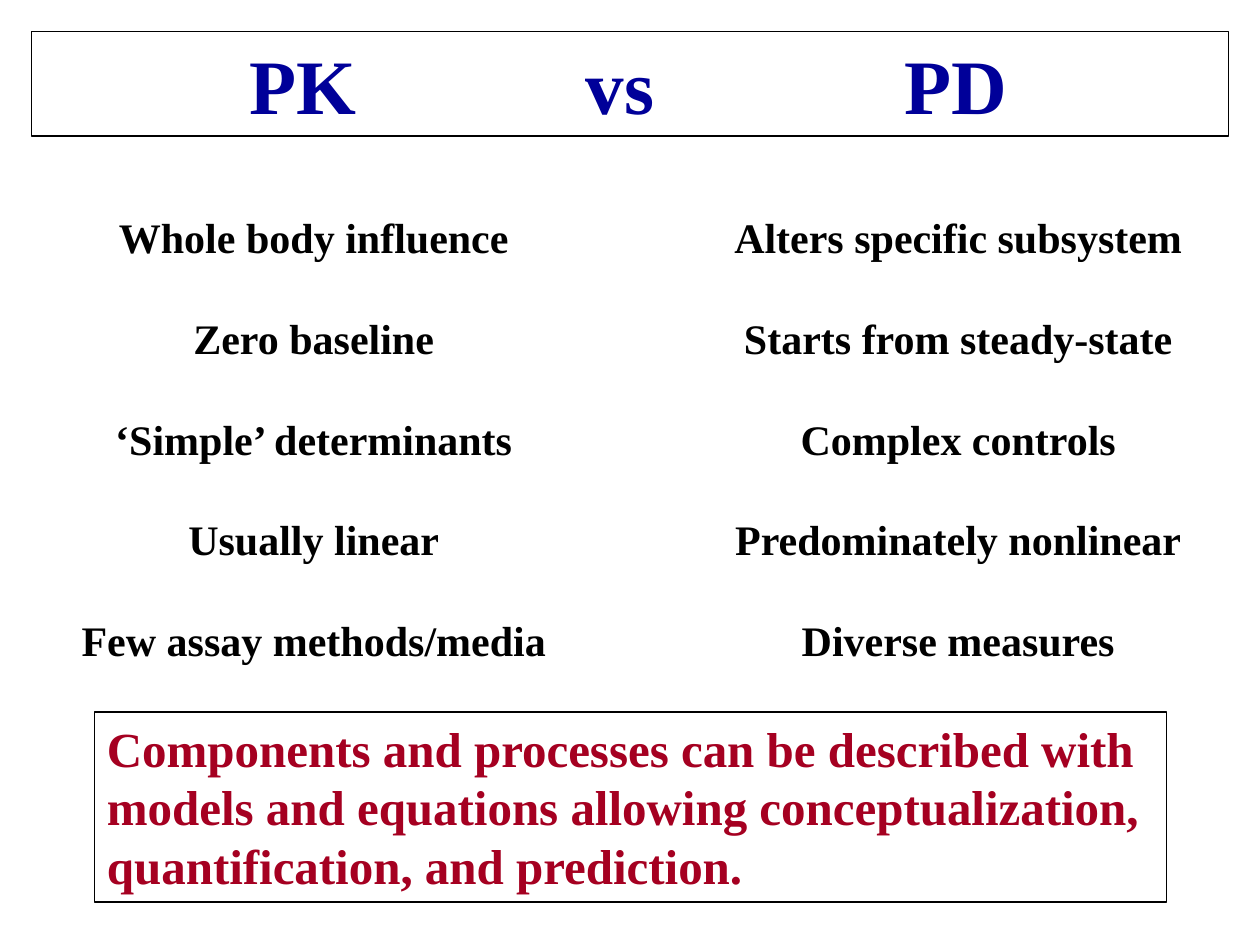
import pptx
import pptx.util
import pptx.dml.color
import pptx.enum.shapes
import pptx.enum.text
import lxml.etree

Inches = pptx.util.Inches
Pt = pptx.util.Pt
Align = pptx.enum.text.PP_ALIGN
Anchor = pptx.enum.text.MSO_ANCHOR


def color(value):
    return pptx.dml.color.RGBColor.from_string(value)


def write(frame, lines, size, tint, align, gap=0):
    frame.text = "\n".join(lines)
    for para in frame.paragraphs:
        para.alignment = align
        para.space_after = Pt(gap)
        para.font.name = "Times New Roman"
        para.font.size = Pt(size)
        para.font.bold = True
        para.font.color.rgb = color(tint)


deck = pptx.Presentation()
deck.slide_width = Inches(10)
deck.slide_height = Inches(7.5)
page = deck.slides.add_slide(deck.slide_layouts[6])

frames = []
for left, top, width, height in [(0.25, 0.25, 9.5, 0.83), (0.75, 5.65, 8.51, 1.51)]:
    box = page.shapes.add_shape(
        pptx.enum.shapes.MSO_SHAPE.RECTANGLE,
        Inches(left), Inches(top), Inches(width), Inches(height))
    box.shadow.inherit = False
    box.fill.background()
    box.line.color.rgb = color("000000")
    box.line.width = Pt(0.75)
    frames.append(box.text_frame)
title, summary = frames

title.margin_left = Inches(1.73)
title.vertical_anchor = Anchor.MIDDLE
write(title, ["PK\tvs\tPD"], 44, "000099", Align.LEFT)
properties = title.paragraphs[0].font._element.getparent()
namespace = "{http://schemas.openxmlformats.org/drawingml/2006/main}"
tabs = lxml.etree.Element(namespace + "tabLst")
for position in (2.67, 5.2):
    lxml.etree.SubElement(tabs, namespace + "tab", pos=str(Inches(position)), algn="l")
properties.insert(len(properties) - 1, tabs)

columns = [
    (0.53, 3.92, ["Whole body influence", "Zero baseline", "‘Simple’ determinants",
                  "Usually linear", "Few assay methods/media"]),
    (5.71, 3.79, ["Alters specific subsystem", "Starts from steady-state",
                  "Complex controls", "Predominately nonlinear", "Diverse measures"]),
]
for left, width, traits in columns:
    box = page.shapes.add_textbox(Inches(left), Inches(1.63), Inches(width), Inches(3.74))
    box.text_frame.word_wrap = False
    write(box.text_frame, traits, 24, "000000", Align.CENTER, 28.8)

summary.word_wrap = False
summary.vertical_anchor = Anchor.TOP
write(summary, ["Components and processes can be described with",
                "models and equations allowing conceptualization,",
                "quantification, and prediction."], 28, "A50021", Align.LEFT)

deck.save("out.pptx")
